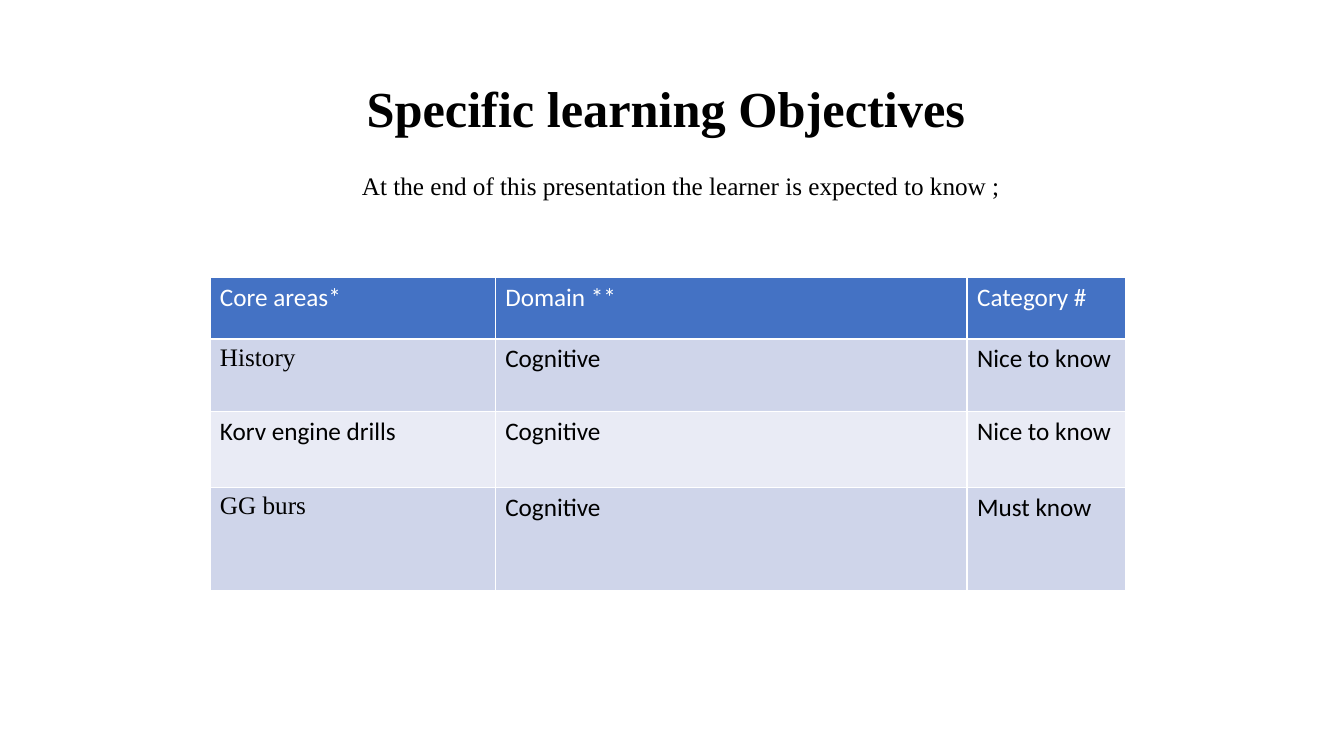
from pptx import Presentation
from pptx.dml.color import RGBColor
from pptx.enum.text import MSO_ANCHOR, MSO_AUTO_SIZE, PP_ALIGN
from pptx.util import Cm, Pt

CENTER, LEFT = PP_ALIGN.CENTER, PP_ALIGN.LEFT
TOP, BOTTOM = MSO_ANCHOR.TOP, MSO_ANCHOR.BOTTOM
NO_FIT = MSO_AUTO_SIZE.NONE

SERIF, SANS = "Times New Roman", "Calibri"
BLACK, WHITE = "000000", "FFFFFF"
HEADER_FILL = "4472C4"
BAND_FILLS = ["CFD5EA", "E9EBF5"]

COLUMN_WIDTHS = [7.19, 11.89, 3.99]
ROW_HEIGHTS = [1.55, 1.83, 1.91, 2.6]
OBJECTIVES = [
    ["Core areas*", "Domain **", "Category #"],
    ["History", "Cognitive", "Nice to know"],
    ["Korv engine drills", "Cognitive", "Nice to know"],
    ["GG burs", "Cognitive", "Must know"],
]
SERIF_AREAS = ["History", "GG burs"]


def color(value):
    return RGBColor.from_string(value)


def set_all(target, values):
    for name, value in values.items():
        setattr(target, name, value)


def write(frame, text, size, font, ink, align, bold=False):
    para = frame.paragraphs[0]
    para.alignment = align
    span = para.add_run()
    span.text = text
    set_all(span.font, {"size": Pt(size), "name": font, "bold": bold})
    span.font.color.rgb = color(ink)
    return para


def fill_placeholder(box, bounds, text, size, anchor, bold=False):
    names = ["left", "top", "width", "height"]
    set_all(box, dict(zip(names, map(Cm, bounds))))
    set_all(box.text_frame, {"word_wrap": True, "auto_size": NO_FIT,
                             "vertical_anchor": anchor})
    para = write(box.text_frame, text, size, SERIF, BLACK, CENTER, bold)
    set_all(para, {"line_spacing": 0.9, "space_before": Pt(0)})


def add_objectives_table(page, left, top):
    table = page.shapes.add_table(
        len(ROW_HEIGHTS), len(COLUMN_WIDTHS), Cm(left), Cm(top),
        Cm(sum(COLUMN_WIDTHS)), Cm(sum(ROW_HEIGHTS))).table
    for column, width in zip(table.columns, COLUMN_WIDTHS):
        column.width = Cm(width)
    for index, (row, height) in enumerate(zip(table.rows, ROW_HEIGHTS)):
        row.height = Cm(height)
        is_header = index == 0
        fill = HEADER_FILL if is_header else BAND_FILLS[(index - 1) % 2]
        for cell, text in zip(row.cells, OBJECTIVES[index]):
            cell.fill.solid()
            cell.fill.fore_color.rgb = color(fill)
            font = SERIF if text in SERIF_AREAS else SANS
            write(cell.text_frame, text, 18, font,
                  WHITE if is_header else BLACK, LEFT)


def main():
    deck = Presentation()
    set_all(deck, {"slide_width": Cm(33.87), "slide_height": Cm(19.05)})
    page = deck.slides.add_slide(deck.slide_layouts[0])
    fill_placeholder(page.shapes.title, (6.15, 1.07, 21.59, 2.54),
                     "Specific learning Objectives ", 36, BOTTOM, bold=True)
    fill_placeholder(
        page.placeholders[1], (6.15, 4.24, 22.02, 13.13),
        "At the end of this presentation the learner is expected to know ;",
        18, TOP)
    add_objectives_table(page, 5.29, 6.99)
    deck.save("out.pptx")


if __name__ == "__main__":
    main()
